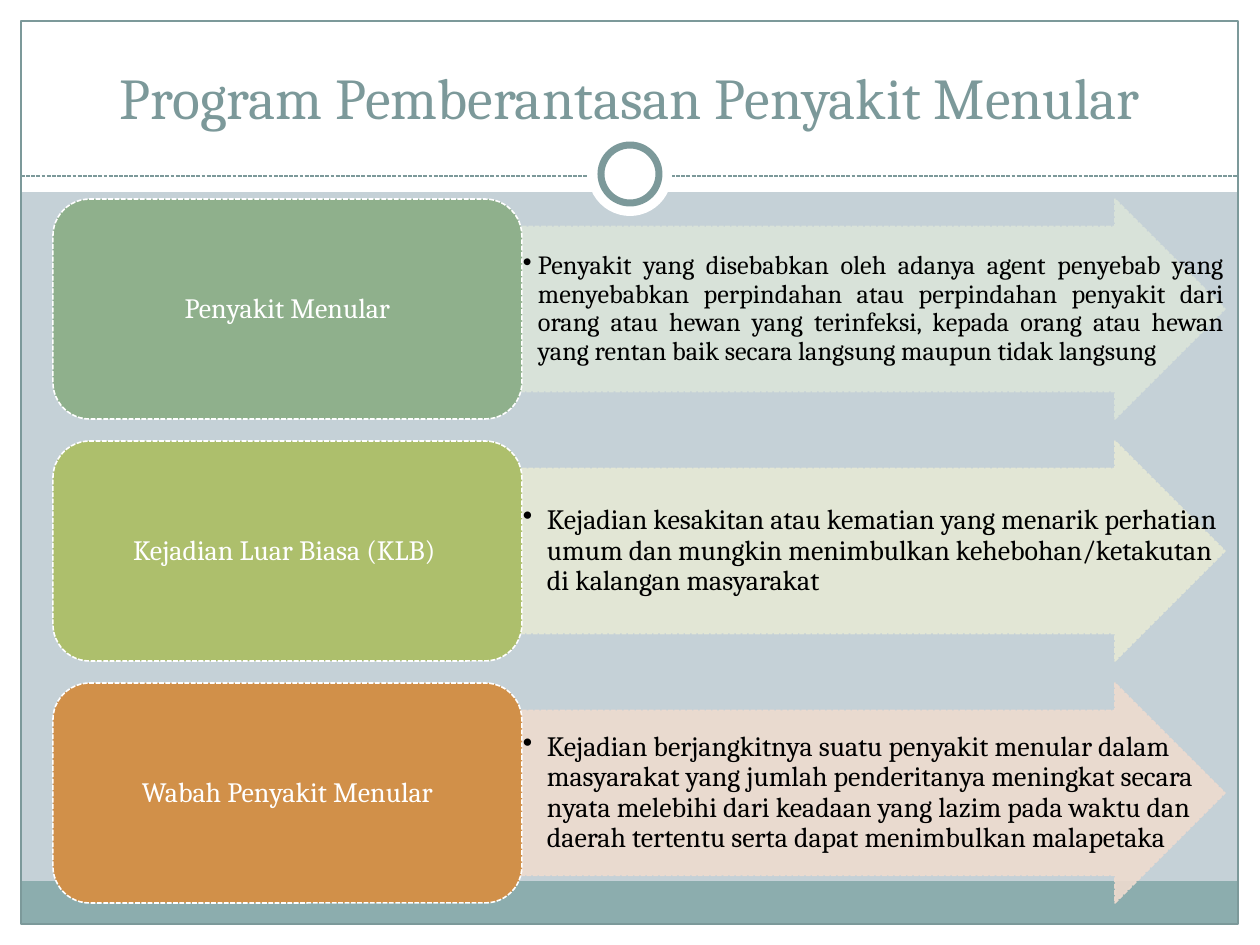
from lxml.etree import SubElement
from pptx import Presentation
from pptx.dml.color import RGBColor
from pptx.enum.dml import MSO_LINE
from pptx.enum.shapes import MSO_CONNECTOR, MSO_SHAPE
from pptx.enum.text import MSO_ANCHOR, MSO_AUTO_SIZE, PP_ALIGN
from pptx.oxml.ns import qn
from pptx.util import Pt

PX = 914400 / 126  # EMU in one px
WHITE = RGBColor(0xFF, 0xFF, 0xFF)
BLACK = RGBColor(0, 0, 0)
BACK = RGBColor(0xC5, 0xD1, 0xD7)
TEAL = RGBColor(0x7C, 0x99, 0x9A)
FOOT = RGBColor(0x8C, 0xAD, 0xAE)
GREEN, MINT = RGBColor(0x8F, 0xB0, 0x8C), RGBColor(0xDB, 0xE4, 0xDA)
LIME, CREAM = RGBColor(0xAD, 0xBF, 0x6C), RGBColor(0xE6, 0xE9, 0xD5)
ORANGE, PEACH = RGBColor(0xD1, 0x90, 0x49), RGBColor(0xEE, 0xDB, 0xCF)


def write(shape, text, size, color, align=PP_ALIGN.CENTER, anchor=MSO_ANCHOR.MIDDLE,
          pad=(9, 4), space=0.9, indent=0):
    """Put one formatted paragraph in a shape; an indent in px adds a bullet."""
    frame = shape.text_frame
    frame.word_wrap = True
    frame.auto_size = MSO_AUTO_SIZE.NONE
    frame.vertical_anchor = anchor
    frame.margin_left = frame.margin_right = round(pad[0] * PX)
    frame.margin_top = frame.margin_bottom = round(pad[1] * PX)
    para = frame.paragraphs[0]
    para.alignment, para.line_spacing = align, space
    run = para.add_run()
    run.text = text
    run.font.name, run.font.size = "Cambria", Pt(size)
    run.font.color.rgb = color
    if indent:
        props = para._p.get_or_add_pPr()
        props.set("marL", str(round(indent * PX)))
        props.set("indent", str(round(-indent * PX)))
        SubElement(props, qn("a:buChar")).set("char", "•")


def draw(kind, box, fill=None, line=None, width=0.75, dash=None, alpha=None):
    """Add a preset shape, with box as left, top, width, height in px."""
    shape = slide.shapes.add_shape(kind, *[round(n * PX) for n in box])
    shape.shadow.inherit = False
    for part, color in ((shape.fill, fill), (shape.line.fill, line)):
        if color is None:
            part.background()
        else:
            part.solid()
            part.fore_color.rgb = color
    if line is not None:
        shape.line.width = Pt(width)
        if dash:
            shape.line.dash_style = dash
    if alpha:
        for tint in shape._element.spPr.iter(qn("a:srgbClr")):
            SubElement(tint, qn("a:alpha")).set("val", str(alpha * 1000))
    return shape


deck = Presentation()
deck.slide_width, deck.slide_height = round(1260 * PX), round(945 * PX)
slide = deck.slides.add_slide(deck.slide_layouts[5])
slide.background.fill.solid()
slide.background.fill.fore_color.rgb = BACK

# White margins and header, foot band, thin frame
for box in ((0, 924, 1260, 21), (0, 0, 1260, 192), (0, 0, 21, 945), (1239, 0, 21, 945)):
    draw(MSO_SHAPE.RECTANGLE, box, WHITE)
draw(MSO_SHAPE.RECTANGLE, (21, 881, 1217, 43), FOOT)
draw(MSO_SHAPE.RECTANGLE, (21, 21, 1217, 903), line=TEAL)

# Dashed rule with a ring in the middle
rule = slide.shapes.add_connector(
    MSO_CONNECTOR.STRAIGHT, *[round(n * PX) for n in (21, 176, 1239, 176)])
rule.line.color.rgb = TEAL
rule.line.width = Pt(0.75)
rule.line.dash_style = MSO_LINE.SQUARE_DOT
SubElement(rule._element.spPr, qn("a:effectLst"))
draw(MSO_SHAPE.OVAL, (588, 132, 84, 84), WHITE)
draw(MSO_SHAPE.OVAL, (601, 145, 58, 58), WHITE, TEAL, 4)

# Title, raised above the header band
title = slide.shapes.title
title.left, title.top, title.width, title.height = [
    round(n * PX) for n in (42, 32, 1176, 105)]
write(title, "Program Pemberantasan Penyakit Menular", 33, TEAL,
      anchor=MSO_ANCHOR.BOTTOM, pad=(13, 6), space=1.0)
title.element.getparent().append(title.element)

# Rows: a term in a rounded box, its meaning on an arrow
rows = (
    ("Penyakit Menular", GREEN, MINT, 15, PP_ALIGN.JUSTIFY, 15,
     "Penyakit yang disebabkan oleh adanya agent penyebab yang menyebabkan "
     "perpindahan atau perpindahan penyakit dari orang atau hewan yang terinfeksi, "
     "kepada orang atau hewan yang rentan baik secara langsung maupun tidak langsung"),
    ("Kejadian Luar Biasa (KLB) ", LIME, CREAM, 16, PP_ALIGN.LEFT, 24,
     "Kejadian kesakitan atau kematian yang menarik perhatian umum dan mungkin "
     "menimbulkan kehebohan/ketakutan di kalangan masyarakat"),
    ("Wabah Penyakit Menular", ORANGE, PEACH, 16, PP_ALIGN.LEFT, 24,
     "Kejadian berjangkitnya suatu penyakit menular dalam masyarakat yang jumlah "
     "penderitanya meningkat secara nyata melebihi dari keadaan yang lazim pada waktu "
     "dan daerah tertentu serta dapat menimbulkan malapetaka"),
)
for i, (term, dark, pale, size, align, indent, text) in enumerate(rows):
    top = 199 + 242 * i
    area = (522, top, 703, 220)
    arrow = draw(MSO_SHAPE.RIGHT_ARROW, area, pale, pale, 0.9, MSO_LINE.SQUARE_DOT, 90)
    arrow.adjustments[0], arrow.adjustments[1] = 0.75, 0.5
    note = slide.shapes.add_textbox(*[round(n * PX) for n in area])
    write(note, text, size, BLACK, align, pad=(1, 1), indent=indent)
    card = draw(MSO_SHAPE.ROUNDED_RECTANGLE, (53, top, 469, 220), dark, WHITE, 0.9,
                MSO_LINE.SQUARE_DOT)
    write(card, term, 16, WHITE)

deck.save("out.pptx")
